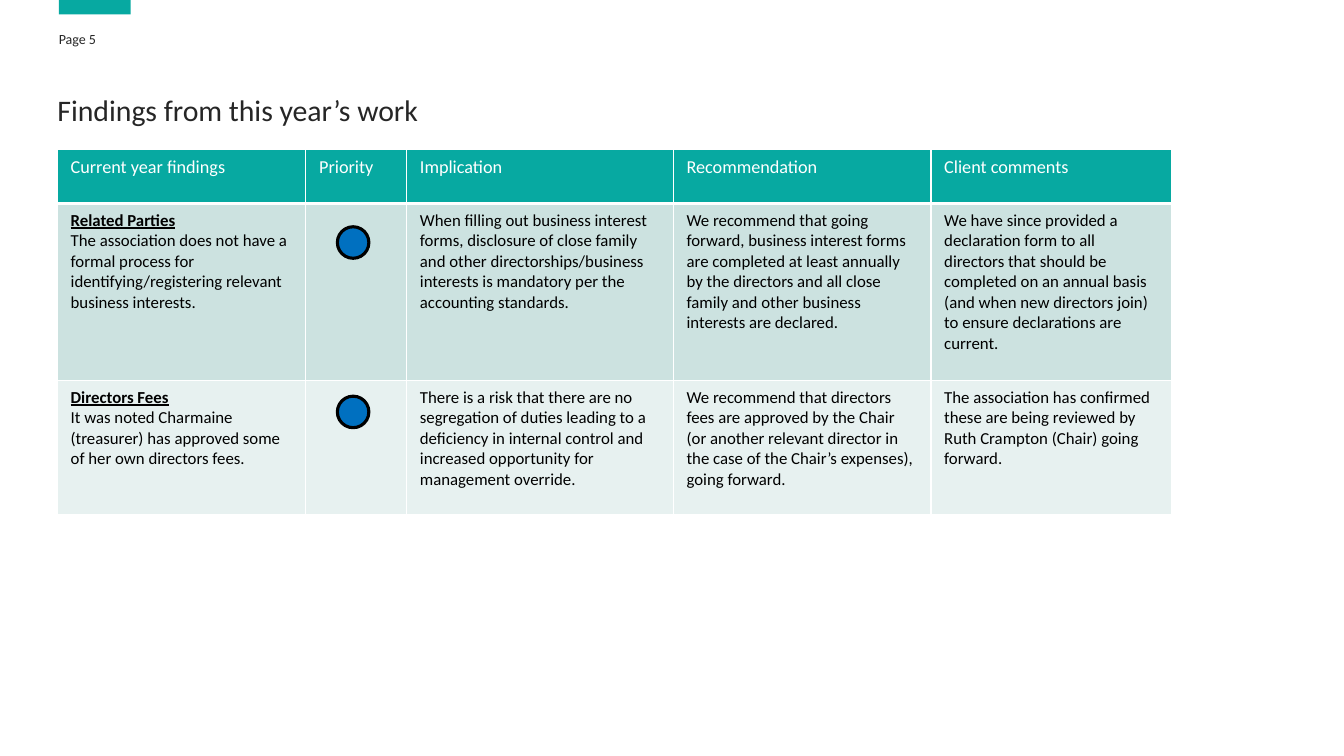
import pptx
import pptx.dml.color
import pptx.enum.shapes
import pptx.enum.text
import pptx.oxml
import pptx.oxml.ns
import pptx.util

Pt = pptx.util.Pt
MSO_SHAPE = pptx.enum.shapes.MSO_SHAPE
TEAL, INK, WHITE, BLACK = "07A9A1", "262626", "FFFFFF", "000000"


def paint(fill, color):
    fill.solid()
    fill.fore_color.rgb = pptx.dml.color.RGBColor.from_string(color)


def write(tf, text, size=12, color=BLACK, margins=(0, 0), heading=False, spacing=None):
    """Write one paragraph per line; a heading makes the first line bold and underlined."""
    tf.word_wrap = True
    tf.auto_size = pptx.enum.text.MSO_AUTO_SIZE.NONE
    tf.vertical_anchor = pptx.enum.text.MSO_ANCHOR.TOP
    tf.margin_left = tf.margin_right = Pt(margins[0])
    tf.margin_top = tf.margin_bottom = Pt(margins[1])
    for i, line in enumerate(text.split("\n")):
        p = tf.paragraphs[0] if i == 0 else tf.add_paragraph()
        p.alignment = pptx.enum.text.PP_ALIGN.LEFT
        p.space_before = Pt(0)
        p.line_spacing = spacing
        r = p.add_run()
        r.text = line
        r.font.name = "Calibri"
        r.font.size = Pt(size)
        r.font.bold = r.font.underline = heading and i == 0
        paint(r.font.fill, color)


prs = pptx.Presentation()
prs.slide_width, prs.slide_height = Pt(960), Pt(540)
s = prs.slides.add_slide(prs.slide_layouts[5])

# Teal tab at the top edge
tab = s.shapes.add_shape(MSO_SHAPE.RECTANGLE, Pt(42), Pt(0), Pt(51.3), Pt(10.3))
tab.shadow.inherit = False
paint(tab.fill, TEAL)
tab.line.fill.background()

# Page label
label = s.shapes.add_textbox(Pt(42), Pt(23), Pt(191.5), Pt(11.5))
write(label.text_frame, "Page 5", size=10, color=INK, spacing=0.9)

# Title
title = s.shapes.title
title.left, title.top, title.width, title.height = Pt(41), Pt(68.4), Pt(877), Pt(36.7)
write(title.text_frame, "Findings from this year’s work", size=21.3, color=INK, spacing=0.9)

# Findings table
rows = [
    ["Current year findings", "Priority", "Implication", "Recommendation", "Client comments"],
    ["Related Parties\nThe association does not have a formal process for "
     "identifying/registering relevant business interests.",
     "",
     "When filling out business interest forms, disclosure of close family and other "
     "directorships/business interests is mandatory per the accounting standards.",
     "We recommend that going forward, business interest forms are completed at least "
     "annually by the directors and all close family and other business interests are declared.",
     "We have since provided a declaration form to all directors that should be completed on "
     "an annual basis (and when new directors join) to ensure declarations are current."],
    ["Directors Fees\nIt was noted Charmaine (treasurer) has approved some of her own "
     "directors fees.",
     "",
     "There is a risk that there are no segregation of duties leading to a deficiency in "
     "internal control and increased opportunity for management override.",
     "We recommend that directors fees are approved by the Chair (or another relevant director "
     "in the case of the Chair’s expenses), going forward.",
     "The association has confirmed these are being reviewed by Ruth Crampton (Chair) "
     "going forward."],
]
col_widths = [177.5, 72, 190.5, 184, 172]
row_heights = [38.6, 126.4, 96]
row_fills = [TEAL, "CCE2E0", "E7F1F0"]

table = s.shapes.add_table(len(rows), len(col_widths), Pt(41), Pt(106.8),
                           Pt(sum(col_widths)), Pt(sum(row_heights))).table
for column, width in zip(table.columns, col_widths):
    column.width = Pt(width)
for i, texts in enumerate(rows):
    table.rows[i].height = Pt(row_heights[i])
    for j, text in enumerate(texts):
        cell = table.cell(i, j)
        # White borders come before the fill in the cell properties
        tcPr = cell._tc.get_or_add_tcPr()
        for side in ("lnL", "lnR", "lnT", "lnB"):
            width = 3 if i == 0 and side == "lnB" else 1
            tcPr.append(pptx.oxml.parse_xml(
                f'<a:{side} {pptx.oxml.ns.nsdecls("a")} w="{Pt(width)}"><a:solidFill>'
                f'<a:srgbClr val="{WHITE}"/></a:solidFill></a:{side}>'))
        paint(cell.fill, row_fills[i])
        cell.margin_left = cell.margin_right = Pt(9.5)
        cell.margin_top = cell.margin_bottom = Pt(4.8)
        if text:
            write(cell.text_frame, text, size=12 if i else 13, color=BLACK if i else WHITE,
                  margins=(9.5, 4.8), heading=i > 0 and j == 0)

# Priority markers
for top in (162, 283):
    marker = s.shapes.add_shape(MSO_SHAPE.OVAL, Pt(241), Pt(top), Pt(22.5), Pt(22.5))
    marker.shadow.inherit = False
    paint(marker.fill, "0070C0")
    paint(marker.line.fill, BLACK)
    marker.line.width = Pt(2.25)

prs.save("out.pptx")
